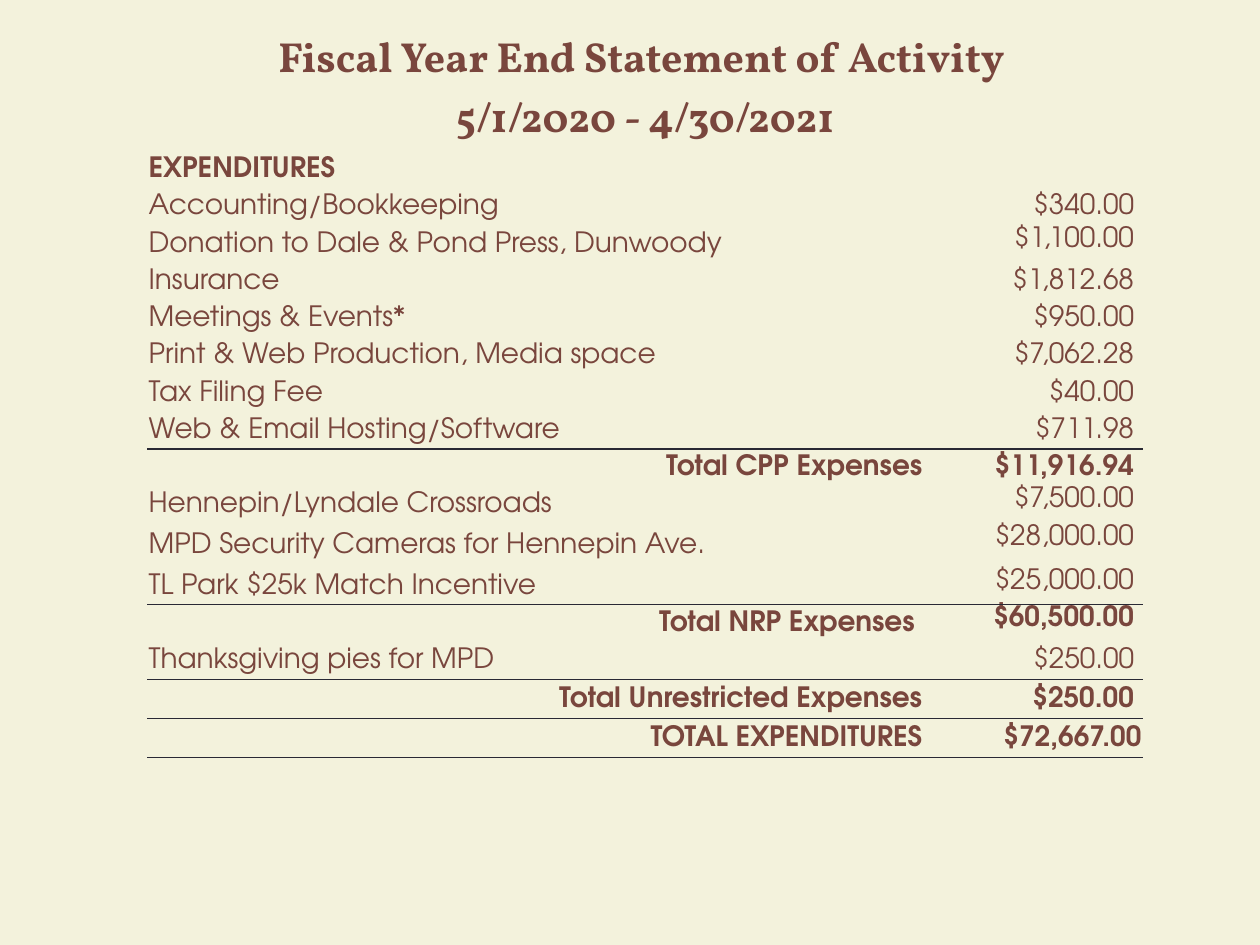
from lxml import etree
from pptx import Presentation
from pptx.dml.color import RGBColor
from pptx.enum.text import MSO_ANCHOR, PP_ALIGN
from pptx.oxml.ns import qn
from pptx.util import Inches, Pt

TOP, MIDDLE = MSO_ANCHOR.TOP, MSO_ANCHOR.MIDDLE
LEFT, CENTER, RIGHT = PP_ALIGN.LEFT, PP_ALIGN.CENTER, PP_ALIGN.RIGHT

BACKGROUND = "F3F2DC"
TEXT_COLOR = "79463D"
RULE_COLOR = "292934"
TITLE_FONT = "Vollkorn"
BODY_FONT = "TeX Gyre Adventor"
NO_GRID_STYLE = "{2D5ABB26-0587-4C30-8999-92F81FD0307C}"

INSET = 0.01
WIDE_INSET = 0.07
COLUMN_WIDTHS = [6.16, 1.74]
BODY_ROW = 2.96 / 10
ROW_HEIGHTS = [0.44, 0.38] + [BODY_ROW] * 10 + [0.35] + [BODY_ROW] * 3 + [0.31] * 2

TITLES = [
    ("Fiscal Year End Statement of Activity", WIDE_INSET),
    ("5/1/2020 - 4/30/2021", INSET),
]
EXPENDITURES = [
    ("EXPENDITURES", ""),
    ("Accounting/Bookkeeping", "$340.00"),
    ("Donation to Dale & Pond Press, Dunwoody", "$1,100.00"),
    ("Insurance", "$1,812.68"),
    ("Meetings & Events*", "$950.00"),
    ("Print & Web Production, Media space", "$7,062.28"),
    ("Tax Filing Fee", "$40.00"),
    ("Web & Email Hosting/Software", "$711.98"),
    ("Total CPP Expenses", "$11,916.94"),
    ("Hennepin/Lyndale Crossroads", "$7,500.00"),
    ("MPD Security Cameras for Hennepin Ave.", "$28,000.00"),
    ("TL Park $25k Match Incentive", "$25,000.00"),
    ("Total NRP Expenses", "$60,500.00"),
    ("Thanksgiving pies for MPD", "$250.00"),
    ("Total Unrestricted Expenses", "$250.00"),
    ("TOTAL EXPENDITURES", "$72,667.00"),
]
TOP_ALIGNED_AMOUNTS = {"$1,100.00", "$7,500.00", "$28,000.00", "$25,000.00", "$60,500.00"}


def color(hex_string):
    return RGBColor.from_string(hex_string)


def is_total(label):
    return label.lower().startswith("total")


def set_borders(cell, ruled_sides):
    properties = cell._tc.get_or_add_tcPr()
    for side in "LRTB":
        line = etree.SubElement(properties, qn(f"a:ln{side}"), w=str(Pt(1)))
        if side in ruled_sides:
            fill = etree.SubElement(line, qn("a:solidFill"))
            etree.SubElement(fill, qn("a:srgbClr"), val=RULE_COLOR)
        else:
            etree.SubElement(line, qn("a:noFill"))


def write_cell(cell, text, font_name, size, bold, alignment,
               anchor=MIDDLE, right_inset=INSET, ruled_sides=""):
    set_borders(cell, ruled_sides)
    cell.fill.background()
    cell.margin_left = cell.margin_top = Inches(INSET)
    cell.margin_right = Inches(right_inset)
    cell.margin_bottom = 0
    cell.vertical_anchor = anchor
    paragraph = cell.text_frame.paragraphs[0]
    paragraph.alignment = alignment
    if text:
        paragraph.add_run().text = text
    font = paragraph.font
    font.name = font_name
    font.size = Pt(size)
    font.bold = bold
    font.color.rgb = color(TEXT_COLOR)


def add_statement_table(slide):
    frame = slide.shapes.add_table(
        len(ROW_HEIGHTS), len(COLUMN_WIDTHS), Inches(1.17), Inches(0.25),
        Inches(sum(COLUMN_WIDTHS)), Inches(sum(ROW_HEIGHTS)))
    table = frame.table
    table.first_row = table.horz_banding = False
    table._tbl.tblPr.find(qn("a:tableStyleId")).text = NO_GRID_STYLE
    for column, width in zip(table.columns, COLUMN_WIDTHS):
        column.width = Inches(width)
    for row, height in zip(table.rows, ROW_HEIGHTS):
        row.height = Inches(height)
    return table


def fill_titles(table):
    for row, (title, right_inset) in enumerate(TITLES):
        cell = table.cell(row, 0)
        cell.merge(table.cell(row, 1))
        write_cell(cell, title, TITLE_FONT, 24, True, CENTER, right_inset=right_inset)


def fill_expenditures(table):
    last = len(EXPENDITURES) - 1
    for index, (label, amount) in enumerate(EXPENDITURES):
        row = index + len(TITLES)
        total = is_total(label)
        bold = total or not amount
        rule_below = index == last or is_total(EXPENDITURES[index + 1][0])
        ruled_sides = ("T" if total else "") + ("B" if rule_below else "")
        write_cell(table.cell(row, 0), label, BODY_FONT, 16, bold,
                   RIGHT if total else LEFT, ruled_sides=ruled_sides,
                   right_inset=WIDE_INSET if label == "Total NRP Expenses" else INSET)
        write_cell(table.cell(row, 1), amount, BODY_FONT, 16, bold, RIGHT,
                   anchor=TOP if amount in TOP_ALIGNED_AMOUNTS else MIDDLE,
                   right_inset=INSET if index == last else WIDE_INSET,
                   ruled_sides=ruled_sides)


def main():
    presentation = Presentation()
    presentation.slide_width = Inches(10)
    presentation.slide_height = Inches(7.5)
    slide = presentation.slides.add_slide(presentation.slide_layouts[6])
    slide.background.fill.solid()
    slide.background.fill.fore_color.rgb = color(BACKGROUND)
    table = add_statement_table(slide)
    fill_titles(table)
    fill_expenditures(table)
    presentation.save("out.pptx")


if __name__ == "__main__":
    main()
